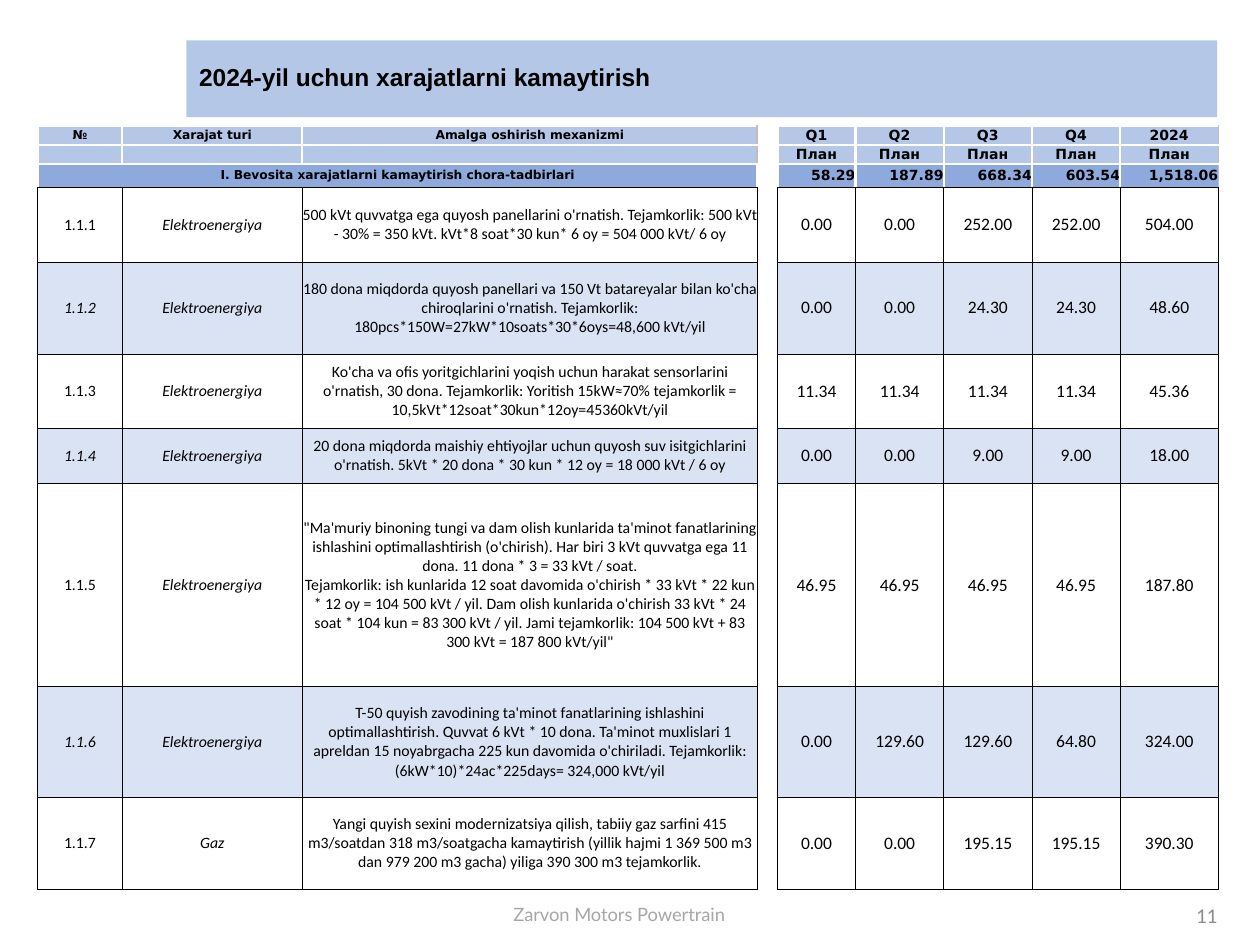
from lxml.etree import SubElement
from pptx import Presentation
from pptx.dml.color import RGBColor
from pptx.enum.text import MSO_ANCHOR as Anchor, PP_ALIGN as Align
from pptx.oxml.ns import qn
from pptx.util import Inches, Pt

HEADER, SECTION, BAND, WHITE, BLACK, EDGE = "B4C7E7", "8EA9DB", "DAE3F3", "FFFFFF", "000000", "BFBFBF"
ROW_HEIGHTS = [0.15, 0.15, 0.19, 0.59, 0.73, 0.59, 0.44, 1.61, 0.88, 0.73]
HEADER_ROWS = 3
MEASURE_HEAD = [
    ["№", "Xarajat turi", "Amalga oshirish mexanizmi"],
    ["", "", ""],
    ["I. Bevosita xarajatlarni kamaytirish chora-tadbirlari", "", ""],
]
MEASURES = [
    ("Elektroenergiya", "500 kVt quvvatga ega quyosh panellarini o'rnatish. Tejamkorlik: 500 kVt - 30% = 350 kVt. "
     "kVt*8 soat*30 kun* 6 oy = 504 000 kVt/ 6 oy"),
    ("Elektroenergiya", "180 dona miqdorda quyosh panellari va 150 Vt batareyalar bilan ko'cha chiroqlarini "
     "o'rnatish. Tejamkorlik: 180pcs*150W=27kW*10soats*30*6oys=48,600 kVt/yil"),
    ("Elektroenergiya", "Ko'cha va ofis yoritgichlarini yoqish uchun harakat sensorlarini o'rnatish, 30 dona. "
     "Tejamkorlik: Yoritish 15kW≈70% tejamkorlik = 10,5kVt*12soat*30kun*12oy=45360kVt/yil"),
    ("Elektroenergiya", "20 dona miqdorda maishiy ehtiyojlar uchun quyosh suv isitgichlarini o'rnatish. "
     "5kVt * 20 dona * 30 kun * 12 oy = 18 000 kVt / 6 oy"),
    ("Elektroenergiya", "\"Ma'muriy binoning tungi va dam olish kunlarida ta'minot fanatlarining ishlashini "
     "optimallashtirish (o'chirish). Har biri 3 kVt quvvatga ega 11 dona. 11 dona * 3 = 33 kVt / soat.\n"
     "Tejamkorlik: ish kunlarida 12 soat davomida o'chirish * 33 kVt * 22 kun * 12 oy = 104 500 kVt / yil. "
     "Dam olish kunlarida o'chirish 33 kVt * 24 soat * 104 kun = 83 300 kVt / yil. "
     "Jami tejamkorlik: 104 500 kVt + 83 300 kVt = 187 800 kVt/yil\""),
    ("Elektroenergiya", "T-50 quyish zavodining ta'minot fanatlarining ishlashini optimallashtirish. "
     "Quvvat 6 kVt * 10 dona. Ta'minot muxlislari 1 apreldan 15 noyabrgacha 225 kun davomida o'chiriladi. "
     "Tejamkorlik: (6kW*10)*24ac*225days= 324,000 kVt/yil"),
    ("Gaz", "Yangi quyish sexini modernizatsiya qilish, tabiiy gaz sarfini 415 m3/soatdan 318 m3/soatgacha "
     "kamaytirish (yillik hajmi 1 369 500 m3 dan 979 200 m3 gacha) yiliga 390 300 m3 tejamkorlik."),
]
PLAN_HEAD = [
    ["Q1", "Q2", "Q3", "Q4", "2024"],
    ["План"] * 5,
    ["58.29", "187.89", "668.34", "603.54", "1,518.06"],
]
PLAN = [
    (0, 0, 252, 252, 504),
    (0, 0, 24.3, 24.3, 48.6),
    (11.34, 11.34, 11.34, 11.34, 45.36),
    (0, 0, 9, 9, 18),
    (46.95, 46.95, 46.95, 46.95, 187.8),
    (0, 129.6, 129.6, 64.8, 324),
    (0, 0, 195.15, 195.15, 390.3),
]


def color(value):
    return RGBColor.from_string(value)


class SlideBuilder:
    """Holds the deck style and draws each kind of element on the current slide."""

    def __init__(self, deck):
        self.slide = deck.slides.add_slide(deck.slide_layouts[5])

    def add_text(self, frame, text, size, font, ink=BLACK, bold=False, italic=False, align=Align.CENTER):
        paragraph = frame.paragraphs[0]
        paragraph.alignment = align
        for index, line in enumerate(text.split("\n")):
            if index:
                paragraph.add_line_break()
            run = paragraph.add_run()
            run.text = line
            run.font.size, run.font.name = Pt(size), font
            run.font.bold, run.font.italic = bold, italic
            run.font.color.rgb = color(ink)
        return paragraph

    def title(self, text, left, top, width, height):
        title = self.slide.shapes.title
        title.left, title.top = Inches(left), Inches(top)
        title.width, title.height = Inches(width), Inches(height)
        title.fill.solid()
        title.fill.fore_color.rgb = color(HEADER)
        title.text_frame.vertical_anchor = Anchor.MIDDLE
        self.add_text(title.text_frame, text, 14, "Arial", bold=True, align=Align.LEFT).line_spacing = 0.9

    def label(self, text, left, top, width, height, size, font, ink, align, anchor):
        box = self.slide.shapes.add_textbox(Inches(left), Inches(top), Inches(width), Inches(height))
        box.text_frame.word_wrap = True
        box.text_frame.vertical_anchor = anchor
        self.add_text(box.text_frame, text, size, font, ink, align=align)

    def borders(self, cell, **sides):
        properties = cell._tc.get_or_add_tcPr()
        for side in "LRTB":
            ink, width = sides[side]
            line = SubElement(properties, qn(f"a:ln{side}"), w=str(Pt(width)))
            SubElement(SubElement(line, qn("a:solidFill")), qn("a:srgbClr"), val=ink)

    def table(self, left, top, widths, head, body, head_size, body_size, italic_at, merge_section=False):
        rows = head + body
        table = self.slide.shapes.add_table(
            len(rows), len(widths), Inches(left), Inches(top), Inches(sum(widths)), Inches(sum(ROW_HEIGHTS))).table
        table.first_row = table.horz_banding = False
        for column, width in zip(table.columns, widths):
            column.width = Inches(width)
        for row, height in zip(table.rows, ROW_HEIGHTS):
            row.height = Inches(height)
        white, black = (WHITE, 1.5), (BLACK, 0.5)
        for r, texts in enumerate(rows):
            in_head, in_section = r < HEADER_ROWS, r == HEADER_ROWS - 1
            banded = (r - HEADER_ROWS) % 2 == 1
            for c, text in enumerate(texts):
                cell = table.cell(r, c)
                cell.margin_left = cell.margin_right = cell.margin_top = cell.margin_bottom = 0
                cell.vertical_anchor = Anchor.MIDDLE
                if in_head:
                    edge = (EDGE, 1) if c == len(widths) - 1 else white
                    self.borders(cell, L=white, R=edge, T=white, B=black if in_section else white)
                    fill = SECTION if in_section else HEADER
                else:
                    self.borders(cell, L=black, R=black, T=black, B=black)
                    fill = BAND if banded else WHITE
                cell.fill.solid()
                cell.fill.fore_color.rgb = color(fill)
                size = head_size if in_head else body_size
                if text:
                    right = in_section and not merge_section
                    self.add_text(cell.text_frame, text, size, "DejaVu Sans" if in_head else "Calibri",
                                  bold=in_head, italic=not in_head and italic_at(c, banded),
                                  align=Align.RIGHT if right else Align.CENTER)
                else:
                    SubElement(cell.text_frame.paragraphs[0]._p, qn("a:endParaRPr"), sz=str(size * 100))
        if merge_section:
            table.cell(HEADER_ROWS - 1, 0).merge(table.cell(HEADER_ROWS - 1, len(widths) - 1))


def main():
    deck = Presentation()
    deck.slide_width, deck.slide_height = Inches(10), Inches(7.5)
    page = SlideBuilder(deck)
    page.label("Zarvon Motors Powertrain", 3.79, 7.12, 2.25, 0.28, 10.5, "Lato", "A6A6A6", Align.CENTER, Anchor.TOP)
    page.title("2024-yil uchun xarajatlarni kamaytirish", 1.48, 0.32, 8.18, 0.61)
    page.label("11", 7.51, 7.06, 2.25, 0.4, 12, "Calibri", "8C8C8C", Align.RIGHT, Anchor.MIDDLE)
    measures = [[f"1.1.{number}", *measure] for number, measure in enumerate(MEASURES, 1)]
    page.table(0.3, 1, [0.67, 1.43, 3.61], MEASURE_HEAD, measures, 7, 9,
               lambda c, banded: c == 1 or (c == 0 and banded), merge_section=True)
    plan = [[f"{value:.2f}" for value in quarters] for quarters in PLAN]
    page.table(6.17, 1, [0.62, 0.7, 0.7, 0.7, 0.78], PLAN_HEAD, plan, 8, 10, lambda c, banded: False)
    deck.save("out.pptx")


if __name__ == "__main__":
    main()
